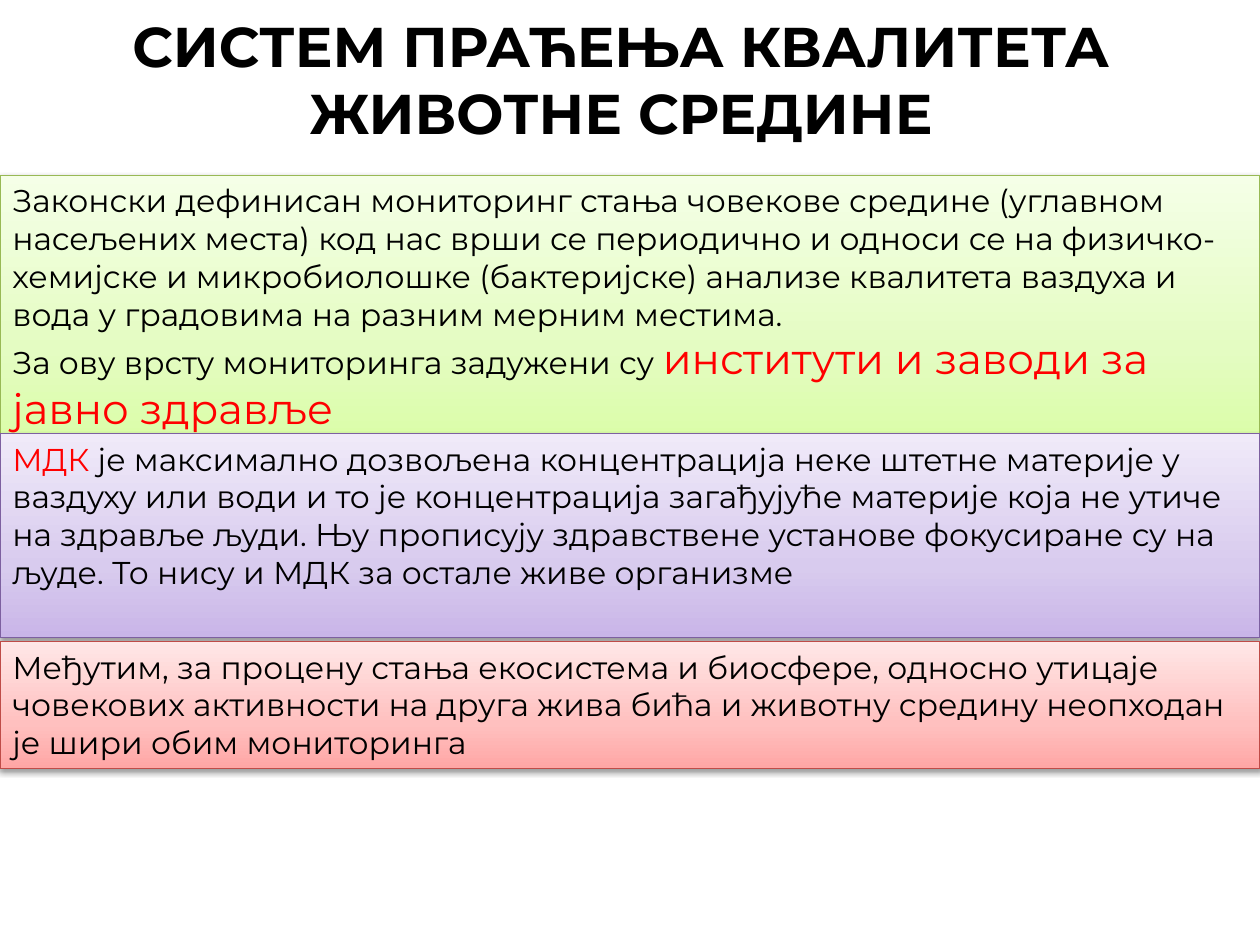
"""Builds a slide on environmental quality monitoring."""
from copy import deepcopy

from pptx import Presentation
from pptx.dml.color import RGBColor
from pptx.enum.shapes import MSO_SHAPE
from pptx.enum.text import MSO_ANCHOR as Anchor, MSO_AUTO_SIZE as AutoSize, PP_ALIGN as Align
from pptx.oxml import parse_xml
from pptx.oxml.ns import nsdecls, qn
from pptx.util import Inches, Pt

BLACK, RED = "000000", "FF0000"
STOP_POSITIONS = (0, 0.35, 1)
SHADOW = (
    f'<a:outerShdw {nsdecls("a")} blurRad="40000" dist="20000" dir="5400000" rotWithShape="0">'
    '<a:srgbClr val="000000"><a:alpha val="38000"/></a:srgbClr></a:outerShdw>'
)


def color(value):
    return RGBColor.from_string(value)


class SlideBuilder:
    def __init__(self, presentation, font="Montserrat"):
        self.font = font
        self.slide = presentation.slides.add_slide(presentation.slide_layouts[5])

    def set_font(self, font, size, value, bold=False):
        font.name, font.size, font.bold = self.font, Pt(size), bold
        font.color.rgb = color(value)

    def title(self, text, left, top, width, height):
        title = self.slide.shapes.title
        title.left, title.top = Inches(left), Inches(top)
        title.width, title.height = Inches(width), Inches(height)
        frame = title.text_frame
        frame.text = text
        frame.vertical_anchor = Anchor.MIDDLE
        frame.auto_size = AutoSize.NONE
        frame.paragraphs[0].alignment = Align.CENTER
        self.set_font(frame.paragraphs[0].font, 32, BLACK, bold=True)

    def gradient(self, shape, colors):
        shape.fill.gradient()
        shape.fill.gradient_angle = 90
        stop_list = shape._element.spPr.find(qn("a:gradFill")).find(qn("a:gsLst"))
        stop_list.append(deepcopy(stop_list[-1]))
        for stop, position, value in zip(shape.fill.gradient_stops, STOP_POSITIONS, colors):
            stop.position = position
            stop.color.rgb = color(value)

    def panel(self, top, height, colors, line, paragraphs):
        shape = self.slide.shapes.add_shape(
            MSO_SHAPE.RECTANGLE, 0, Inches(top), Inches(10), Inches(height))
        self.gradient(shape, colors)
        shape.line.color.rgb = color(line)
        shape.line.width = Pt(0.75)
        shape.shadow.inherit = False
        shape._element.spPr.find(qn("a:effectLst")).append(parse_xml(SHADOW))
        frame = shape.text_frame
        frame.word_wrap = True
        frame.auto_size = AutoSize.SHAPE_TO_FIT_TEXT
        frame.vertical_anchor = Anchor.TOP
        for index, runs in enumerate(paragraphs):
            paragraph = frame.add_paragraph() if index else frame.paragraphs[0]
            paragraph.alignment = Align.LEFT
            for text, size, value in runs:
                run = paragraph.add_run()
                run.text = text
                self.set_font(run.font, size, value)


def main():
    presentation = Presentation()
    presentation.slide_width, presentation.slide_height = Inches(10), Inches(7.5)
    builder = SlideBuilder(presentation)
    builder.title("СИСТЕМ ПРАЋЕЊА КВАЛИТЕТА ЖИВОТНЕ СРЕДИНЕ", 0.43, 0, 9, 1.25)
    builder.panel(1.39, 2.12, ("DAFDA7", "E4FCC2", "F5FFE7"), "98B955", [
        [("Законски дефинисан мониторинг стања човекове средине (углавном насељених места) "
          "код нас врши се периодично и односи се на физичко-хемијске и микробиолошке "
          "(бактеријске) анализе квалитета ваздуха и вода у градовима на разним мерним "
          "местима.", 18, BLACK)],
        [("За ову врсту мониторинга задужени су ", 18, BLACK),
         ("институти и заводи за јавно здравље", 24, RED)],
    ])
    builder.panel(3.44, 1.62, ("C9B5E8", "D8CBEE", "F0EAF9"), "7D60A0", [
        [("МДК", 18, RED),
         (" је максимално дозвољена концентрација неке штетне материје у ваздуху или води "
          "и то је концентрација загађујуће материје која не утиче на здравље људи. Њу "
          "прописују здравствене установе фокусиране су на људе. То нису и МДК за остале "
          "живе организме", 18, BLACK)],
    ])
    builder.panel(5.09, 1.01, ("FFA6A5", "FFC0BF", "FFE7E7"), "BF4C48", [
        [("Међутим, за процену стања екосистема и биосфере, односно утицаје човекових "
          "активности на друга жива бића и животну средину неопходан је шири обим "
          "мониторинга", 18, BLACK)],
    ])
    presentation.save("out.pptx")


if __name__ == "__main__":
    main()
